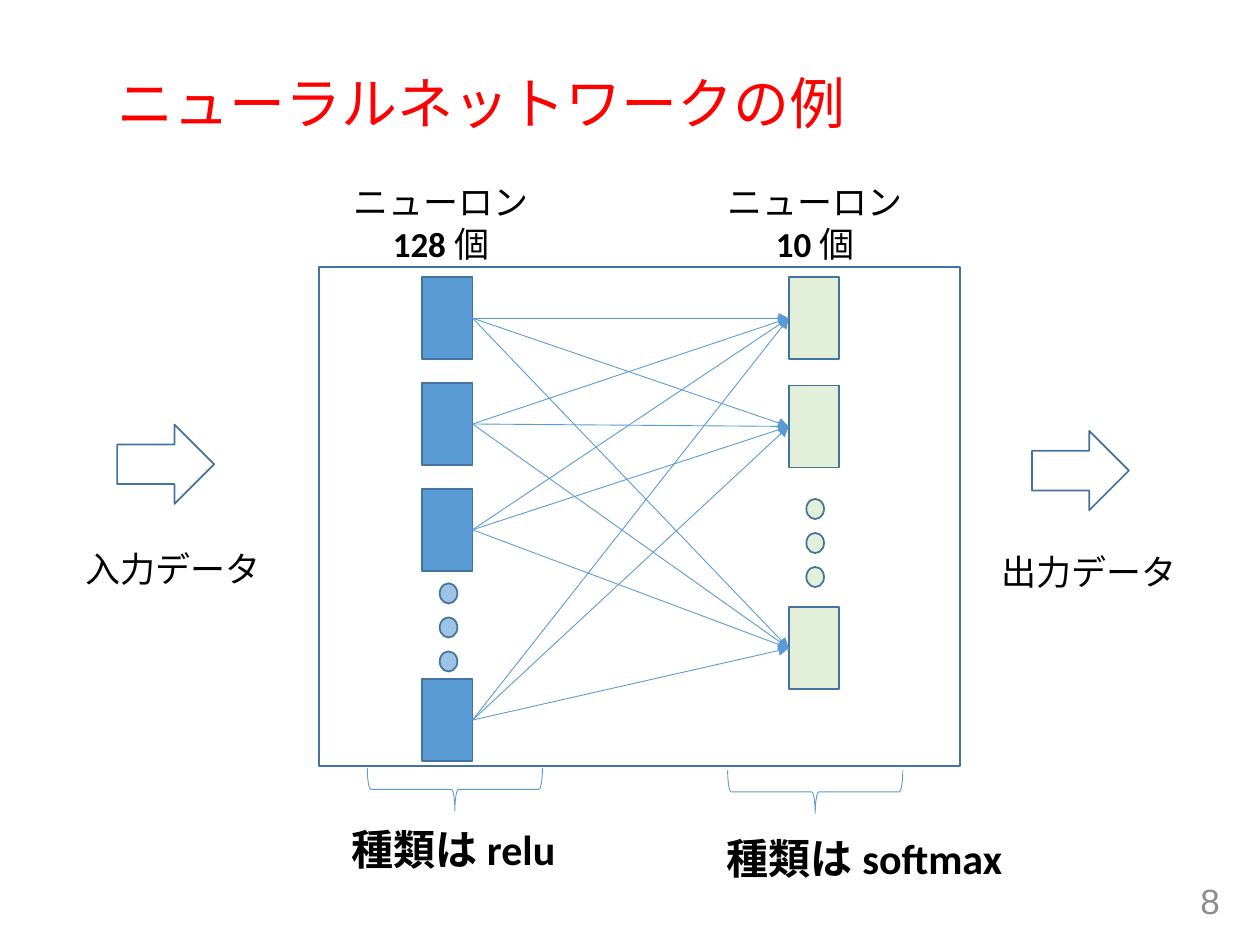
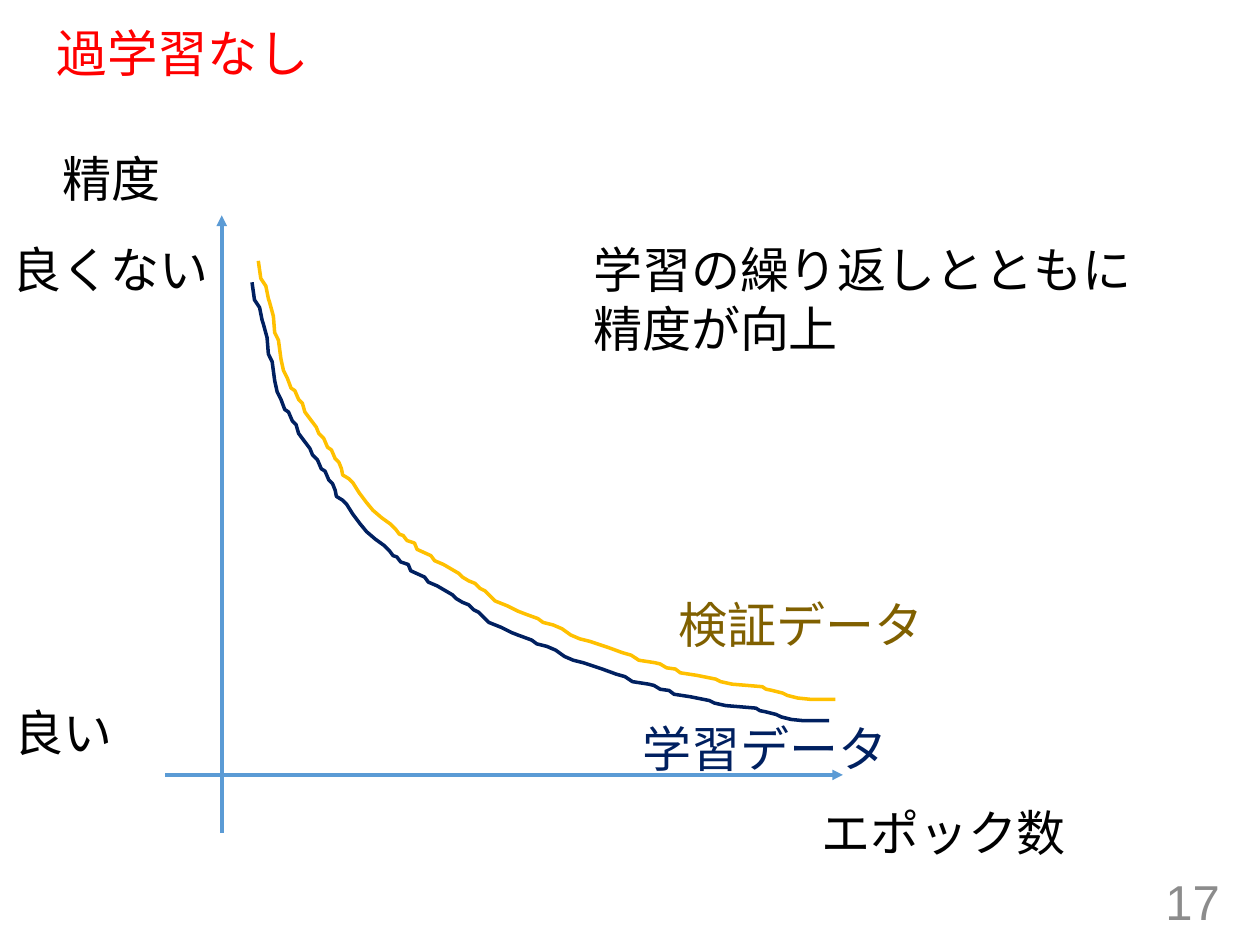
from pptx import Presentation
from pptx.dml.color import RGBColor
from pptx.enum.shapes import MSO_CONNECTOR, MSO_SHAPE
from pptx.enum.text import MSO_ANCHOR, MSO_AUTO_SIZE, PP_ALIGN
from pptx.oxml.ns import qn
from pptx.util import Pt
from lxml import etree

PX = 9144  # EMU per px, 100 px to the inch
SLIDE_W, SLIDE_H = 1000, 750
TITLE_ONLY = 5

RED = RGBColor(0xFF, 0x00, 0x00)
BLACK = RGBColor(0x00, 0x00, 0x00)
GRAY = RGBColor(0x8C, 0x8C, 0x8C)
BLUE = RGBColor(0x5B, 0x9B, 0xD5)
EDGE = RGBColor(0x43, 0x73, 0x9E)
PALE_BLUE = RGBColor(0x9D, 0xC3, 0xE6)
PALE_GREEN = RGBColor(0xE2, 0xF0, 0xD9)
NAVY = RGBColor(0x00, 0x20, 0x60)
GOLD = RGBColor(0xFF, 0xC0, 0x00)
BROWN = RGBColor(0x80, 0x60, 0x00)

RECT, OVAL = MSO_SHAPE.RECTANGLE, MSO_SHAPE.OVAL
ARROW, BRACE = MSO_SHAPE.RIGHT_ARROW, MSO_SHAPE.RIGHT_BRACE
STRAIGHT = MSO_CONNECTOR.STRAIGHT
LEFT, CENTER, RIGHT = PP_ALIGN.LEFT, PP_ALIGN.CENTER, PP_ALIGN.RIGHT
MIDDLE = MSO_ANCHOR.MIDDLE
NO_FIT, GROW = MSO_AUTO_SIZE.NONE, MSO_AUTO_SIZE.SHAPE_TO_FIT_TEXT
LEFT_SIDE, RIGHT_SIDE = 1, 3

# Learning curve, both data sets follow it
CURVE = [
    (200, 224), (202, 238), (206, 244), (208, 254), (209, 257), (212, 268),
    (213, 281), (216, 287), (218, 302), (220, 311), (223, 317), (226, 325),
    (229, 327), (232, 334), (235, 337), (237, 344), (240, 348), (246, 356),
    (248, 361), (252, 365), (255, 372), (258, 374), (261, 381), (264, 384),
    (266, 389), (267, 394), (272, 397), (275, 400), (280, 408), (286, 416),
    (291, 422), (298, 428), (305, 433), (309, 437), (312, 441), (315, 442),
    (318, 446), (324, 448), (326, 453), (337, 458), (340, 462), (347, 465),
    (359, 472), (362, 475), (367, 478), (372, 480), (376, 484), (380, 486),
    (383, 489), (388, 494), (398, 498), (406, 502), (411, 504), (422, 508),
    (426, 511), (434, 513), (441, 516), (448, 521), (455, 524), (463, 526),
    (469, 528), (478, 531), (489, 535), (496, 537), (502, 541), (515, 543),
    (519, 544), (524, 547), (531, 548), (535, 551), (548, 553), (563, 556),
    (567, 558), (576, 560), (588, 561), (600, 562), (603, 564), (608, 565),
    (616, 567), (620, 569), (628, 571), (638, 572), (658, 572)]


def px(*lengths):
    return [n * PX for n in lengths]


def style_runs(p, size, color, font, bold=None):
    for r in p.runs:
        r.font.size = Pt(size)
        r.font.name = font
        r.font.color.rgb = color
        if bold is not None:
            r.font.bold = bold


def add_text(s, box, text, size, color=BLACK, font="Calibri", align=LEFT,
             bold=None, wrap=False, fit=GROW):
    tf = s.shapes.add_textbox(*px(*box)).text_frame
    tf.text = text
    tf.word_wrap = wrap
    tf.auto_size = fit
    for p in tf.paragraphs:
        p.alignment = align
        style_runs(p, size, color, font, bold)
    return tf


def add_slide(prs, title, title_box, title_size, number, number_size):
    s = prs.slides.add_slide(prs.slide_layouts[TITLE_ONLY])
    sp = s.shapes.title
    sp.left, sp.top, sp.width, sp.height = px(*title_box)
    tf = sp.text_frame
    tf.text = title
    tf.auto_size = NO_FIT
    tf.vertical_anchor = MIDDLE
    p = tf.paragraphs[0]
    p.alignment = LEFT
    p.line_spacing = 0.9
    style_runs(p, title_size, RED, "Arial")
    tf = add_text(s, (753, 695, 225, 40), number, number_size, GRAY, "Arial",
                  RIGHT, wrap=True, fit=NO_FIT)
    tf.vertical_anchor = MIDDLE
    return s


def add_figure(s, kind, box, fill=None, line=EDGE, width=1):
    sp = s.shapes.add_shape(kind, *px(*box))
    outline(sp, fill, line, width)
    return sp


def outline(sp, fill, line, width):
    sp.shadow.inherit = False
    if fill is None:
        sp.fill.background()
    else:
        sp.fill.solid()
        sp.fill.fore_color.rgb = fill
    sp.line.color.rgb = line
    sp.line.width = Pt(width)


def add_arrow(s, width, start=(0, 0), end=(0, 0)):
    c = s.shapes.add_connector(STRAIGHT, *px(*start, *end))
    c.line.color.rgb = BLUE
    c.line.width = Pt(width)
    spPr = c.element.spPr
    etree.SubElement(spPr.find(qn("a:ln")), qn("a:tailEnd"), type="triangle")
    etree.SubElement(spPr, qn("a:effectLst"))
    return c


def add_layer(s, x, tops, fill, dots_top, dot_fill):
    """A column of neurons with three dots for those left out."""
    for i in range(3):
        add_figure(s, OVAL, (x + 14, dots_top + 27 * i, 14, 16), dot_fill)
    return [add_figure(s, RECT, (x, top, 40, 65), fill) for top in tops]


def add_neuron_count(s, x, count):
    tf = add_text(s, (x, 138, 160, 77), "ニューロン", 20, align=CENTER)
    p = tf.add_paragraph()
    p.alignment = CENTER
    for text, bold in ((count, True), (" 個", False)):
        r = p.add_run()
        r.text = text
        r.font.bold = bold
    style_runs(p, 20, BLACK, "Calibri")


def add_curve(s, dx, dy, color):
    points = [(x + dx, y + dy) for x, y in CURVE]
    fb = s.shapes.build_freeform(*points[0], scale=PX)
    fb.add_line_segments(points[1:], close=False)
    outline(fb.convert_to_shape(), None, color, 2)


def network_slide(prs):
    s = add_slide(prs, "ニューラルネットワークの例", (83, 20, 834, 129), 32, "8", 20)
    # Layers, joined neuron by neuron
    hidden = add_layer(s, 335, (220, 304, 388, 539), BLUE, 463, PALE_BLUE)
    output = add_layer(s, 626, (220, 306, 482), PALE_GREEN, 396, PALE_GREEN)
    for source in hidden:
        for target in output:
            c = add_arrow(s, 0.5)
            c.begin_connect(source, RIGHT_SIDE)
            c.end_connect(target, LEFT_SIDE)
    add_figure(s, RECT, (253, 212, 509, 396))
    # Data in and out
    for x, y, text_x, text_y, text in ((93, 337, 58, 430, "入力データ"),
                                       (819, 342, 785, 432, "出力データ")):
        add_figure(s, ARROW, (x, y, 77, 63))
        add_text(s, (text_x, text_y, 160, 44), text, 20)
    # Size and kind of each layer
    add_neuron_count(s, 270, "128")
    add_neuron_count(s, 567, "10")
    for brace_x, brace_y, box, text in (
            (344, 557, (269, 649, 212, 50), "種類は relu"),
            (630, 559, (567, 656, 296, 50), "種類は softmax")):
        brace = add_figure(s, BRACE, (brace_x, brace_y, 34, 139), None, BLUE, 0.5)
        brace.rotation = 90
        add_text(s, box, text, 24, bold=True, wrap=True)


def accuracy_slide(prs):
    s = add_slide(prs, "過学習なし", (35, 19, 925, 51), 28.8, "17", 28)
    # Axes
    add_arrow(s, 2, (176, 661), (176, 171))
    add_arrow(s, 2, (131, 615), (669, 615))
    # Curves
    add_curve(s, 0, 0, NAVY)
    add_curve(s, 5, -17, GOLD)
    # Labels
    for box, text, color in (
            ((40, 113, 99, 57), "精度", BLACK),
            ((642, 632, 217, 57), "エポック数", BLACK),
            ((500, 565, 217, 57), "学習データ", NAVY),
            ((529, 467, 217, 57), "検証データ", BROWN),
            ((0, 185, 177, 57), "良くない", BLACK),
            ((2, 553, 99, 57), "良い", BLACK),
            ((461, 185, 452, 104), "学習の繰り返しとともに\n精度が向上", BLACK)):
        add_text(s, box, text, 28, color)


def main():
    prs = Presentation()
    prs.slide_width, prs.slide_height = px(SLIDE_W, SLIDE_H)
    network_slide(prs)
    accuracy_slide(prs)
    prs.save("out.pptx")


if __name__ == "__main__":
    main()
